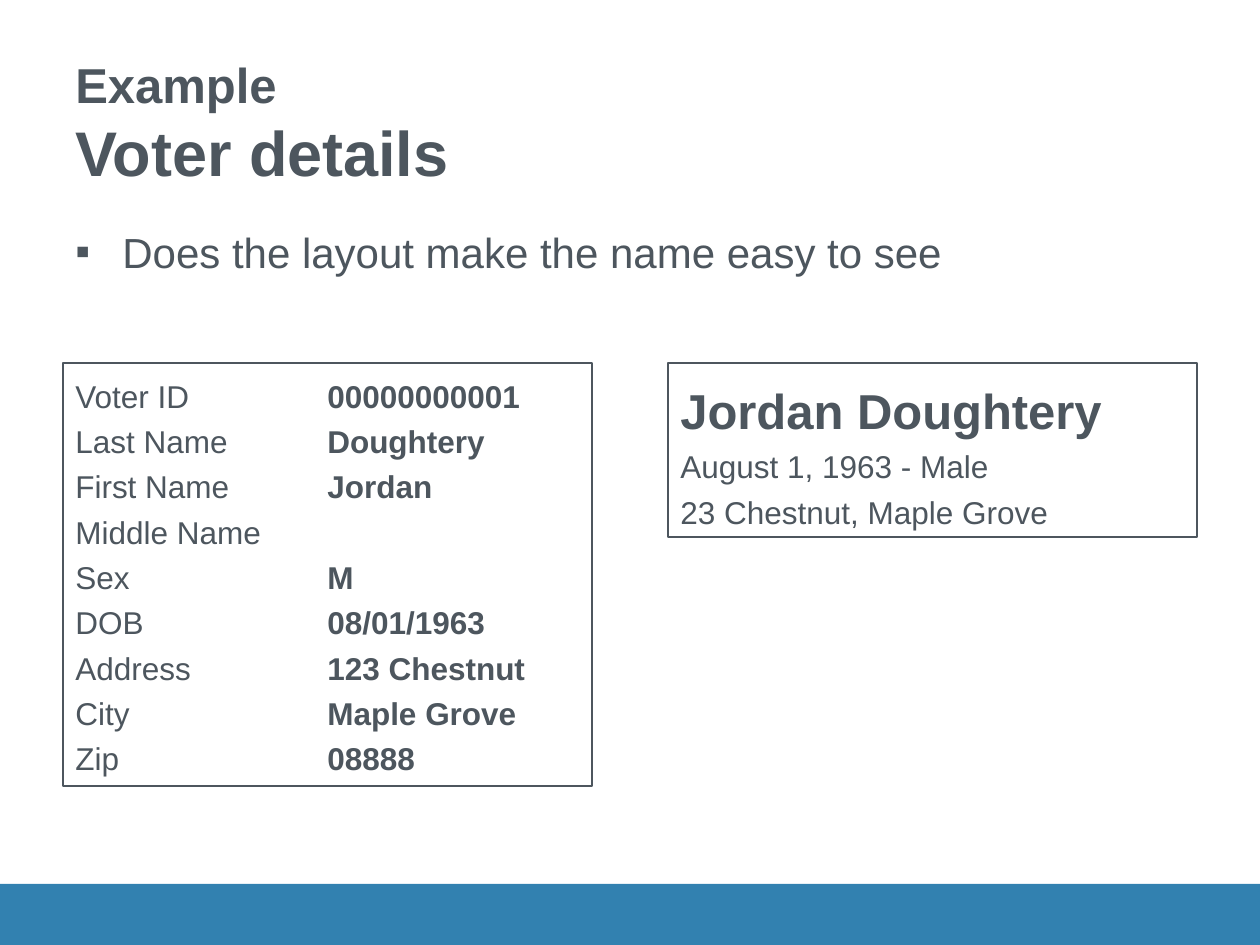
from lxml import etree
from pptx import Presentation
from pptx.dml.color import RGBColor
from pptx.enum.shapes import MSO_SHAPE
from pptx.enum.text import MSO_ANCHOR, MSO_AUTO_SIZE, PP_ALIGN
from pptx.oxml.ns import qn
from pptx.util import Pt

RECT = MSO_SHAPE.RECTANGLE
TOP, BOTTOM = MSO_ANCHOR.TOP, MSO_ANCHOR.BOTTOM
GROW = MSO_AUTO_SIZE.SHAPE_TO_FIT_TEXT
LEFT = PP_ALIGN.LEFT

PX = 914400 // 126
COLORS = {"text": "4D565E", "band": "3281B0"}
FONT = "Arial"


def style(run, size, bold=False):
    run.font.name = FONT
    run.font.size = Pt(size)
    run.font.bold = bold
    run.font.color.rgb = RGBColor.from_string(COLORS["text"])


def add_card(left, height):
    card = slide.shapes.add_shape(RECT, left * PX, 363 * PX, 529 * PX, height * PX)
    card.shadow.inherit = False
    card.fill.background()
    card.line.color.rgb = RGBColor.from_string(COLORS["text"])
    card.line.width = Pt(0.75)
    frame = card.text_frame
    frame.word_wrap = True
    frame.auto_size = GROW
    frame.vertical_anchor = TOP
    return frame


prs = Presentation()
prs.slide_width, prs.slide_height = 1260 * PX, 945 * PX
slide = prs.slides.add_slide(prs.slide_layouts[6])

# Footer band
band = slide.shapes.add_shape(RECT, 0, 884 * PX, 1260 * PX, 61 * PX)
band.shadow.inherit = False
band.fill.solid()
band.fill.fore_color.rgb = RGBColor.from_string(COLORS["band"])
band.line.fill.background()

# Title
title = slide.shapes.add_textbox(63 * PX, 38 * PX, 1134 * PX, 157 * PX).text_frame
title.word_wrap = True
title.vertical_anchor = BOTTOM
title.text = "Example\vVoter details"
for run, size in zip(title.paragraphs[0].runs, (28, 36)):
    style(run, size, True)

# Bullet
body = slide.shapes.add_textbox(63 * PX, 220 * PX, 1134 * PX, 101 * PX).text_frame
body.word_wrap = True
body.text = "Does the layout make the name easy to see"
para = body.paragraphs[0]
para.space_before = Pt(4.8)
style(para.runs[0], 24)
props = para._p.get_or_add_pPr()
props.set("marL", str(47 * PX))
props.set("indent", str(-47 * PX))
etree.SubElement(props, qn("a:buFont"), typeface=FONT)
etree.SubElement(props, qn("a:buChar"), char="▪")

# Voter record: labels, with values at one tab stop
fields = [
    ("Voter ID", "00000000001"),
    ("Last Name", "Doughtery"),
    ("First Name", "Jordan"),
    ("Middle Name", ""),
    ("Sex", "M"),
    ("DOB", "08/01/1963"),
    ("Address", "123 Chestnut"),
    ("City", "Maple Grove"),
    ("Zip", "08888"),
]
record = add_card(63, 423)
for i, (label, value) in enumerate(fields):
    para = record.add_paragraph() if i else record.paragraphs[0]
    para.text = label + "\t" if value else label
    para.alignment = LEFT
    para.line_spacing = 1.2
    style(para.runs[0], 18)
    if value:
        run = para.add_run()
        run.text = value
        style(run, 18, True)
        tabs = etree.SubElement(para._p.get_or_add_pPr(), qn("a:tabLst"))
        etree.SubElement(tabs, qn("a:tab"), pos=str(252 * PX), algn="l")

# Voter summary: the name stands out
summary = add_card(668, 174)
summary.text = "Jordan Doughtery\nAugust 1, 1963 - Male\n23 Chestnut, Maple Grove"
for i, para in enumerate(summary.paragraphs):
    para.alignment = LEFT
    para.line_spacing = 1.2
    style(para.runs[0], 18 if i else 28, i == 0)

prs.save("out.pptx")
